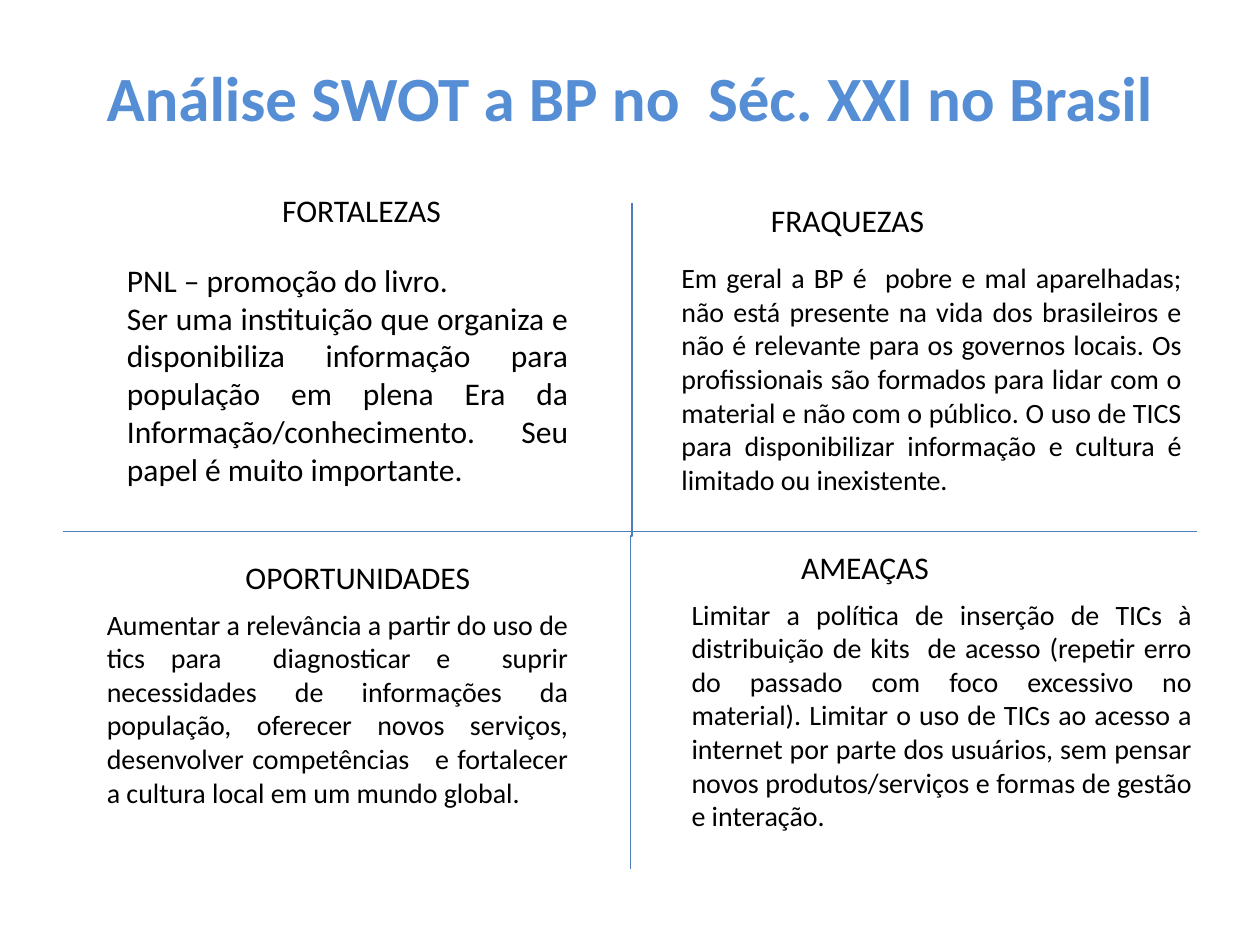
from lxml import etree
from pptx import Presentation
from pptx.dml.color import RGBColor
from pptx.enum.shapes import MSO_CONNECTOR
from pptx.enum.text import MSO_ANCHOR, MSO_AUTO_SIZE, PP_ALIGN
from pptx.oxml.ns import qn
from pptx.util import Inches, Pt

LEFT, CENTER, JUSTIFY = PP_ALIGN.LEFT, PP_ALIGN.CENTER, PP_ALIGN.JUSTIFY
ELBOW, STRAIGHT = MSO_CONNECTOR.ELBOW, MSO_CONNECTOR.STRAIGHT
MIDDLE, GROW = MSO_ANCHOR.MIDDLE, MSO_AUTO_SIZE.SHAPE_TO_FIT_TEXT
FONT = "Calibri"
COLORS = {"title": "558ED5", "text": "000000", "line": "4B7EBC"}

TITLE = "Análise SWOT a BP no  Séc. XXI no Brasil"

# text, box (left, top, width, height), alignment, wrap
HEADS = [
    (" FORTALEZAS ", (0.98, 1.47, 3.78, 0.4), CENTER, True),
    ("FRAQUEZAS", (6.02, 1.55, 1.49, 0.4), LEFT, False),
    ("OPORTUNIDADES", (1.85, 4.38, 2, 0.4), LEFT, False),
    ("AMEAÇAS", (6.26, 4.3, 1.28, 0.4), LEFT, False),
]

# paragraphs, box, size
BODIES = [
    (["PNL – promoção do livro.",
      "Ser uma instituição que organiza e disponibiliza informação para "
      "população em plena Era da Informação/conhecimento. Seu papel é muito "
      "importante."],
     (0.91, 2.02, 3.7, 1.92), 18),
    (["Em geral a BP é  pobre e mal aparelhadas; não está presente na vida "
      "dos brasileiros e não é relevante para os governos locais. Os "
      "profissionais são formados para lidar com o material e não com o "
      "público. O uso de TICS para disponibilizar informação e cultura é "
      "limitado ou inexistente."],
     (5.31, 2.02, 4.17, 1.99), 16),
    (["Aumentar a relevância a partir do uso de tics para  diagnosticar e  "
      "suprir necessidades de informações da população, oferecer novos "
      "serviços, desenvolver competências   e fortalecer a cultura local em "
      "um mundo global. "],
     (0.75, 4.77, 3.86, 1.72), 16),
    (["Limitar a política de inserção de TICs à distribuição de kits  de "
      "acesso (repetir erro do passado com foco excessivo no material). "
      "Limitar o uso de TICs ao acesso a internet por parte dos usuários, "
      "sem pensar novos produtos/serviços e formas de gestão e interação. "],
     (5.39, 4.69, 4.17, 1.99), 16),
]


def write(frame, paras, size=18, color="text", bold=False, align=LEFT):
    for i, text in enumerate(paras):
        para = frame.paragraphs[0] if i == 0 else frame.add_paragraph()
        para.alignment = align
        run = para.add_run()
        run.text = text
        font = run.font
        font.name, font.size, font.bold = FONT, Pt(size), bold
        font.color.rgb = RGBColor.from_string(COLORS[color])


def add_text(slide, paras, box, wrap=True, **style):
    frame = slide.shapes.add_textbox(*map(Inches, box)).text_frame
    frame.word_wrap = wrap
    frame.auto_size = GROW
    write(frame, paras, **style)


def add_line(slide, kind, start, end):
    line = slide.shapes.add_connector(kind, *map(Inches, start + end))
    line.line.color.rgb = RGBColor.from_string(COLORS["line"])
    line.line.width = Pt(0.75)
    etree.SubElement(line._element.spPr, qn("a:effectLst"))
    return line


def main():
    prs = Presentation()
    prs.slide_width, prs.slide_height = Inches(10), Inches(7.5)
    slide = prs.slides.add_slide(prs.slide_layouts[5])

    title = slide.shapes.title
    title.left, title.top = Inches(0.5), Inches(0.3)
    title.width, title.height = Inches(9), Inches(0.93)
    title.text_frame.vertical_anchor = MIDDLE
    write(title.text_frame, [TITLE], size=36, color="title", bold=True,
          align=CENTER)

    # A flat elbow, turned a quarter, makes the upright axis.
    axis = add_line(slide, ELBOW, (2.37, 4.25), (7.65, 4.26))
    axis._element.spPr.xfrm.set("rot", str(90 * 60000))
    add_line(slide, STRAIGHT, (0.5, 4.22), (9.5, 4.22))

    for head, body in zip(HEADS, BODIES):
        text, box, align, wrap = head
        add_text(slide, [text], box, wrap, align=align)
        paras, box, size = body
        add_text(slide, paras, box, size=size, align=JUSTIFY)

    prs.save("out.pptx")


if __name__ == "__main__":
    main()
